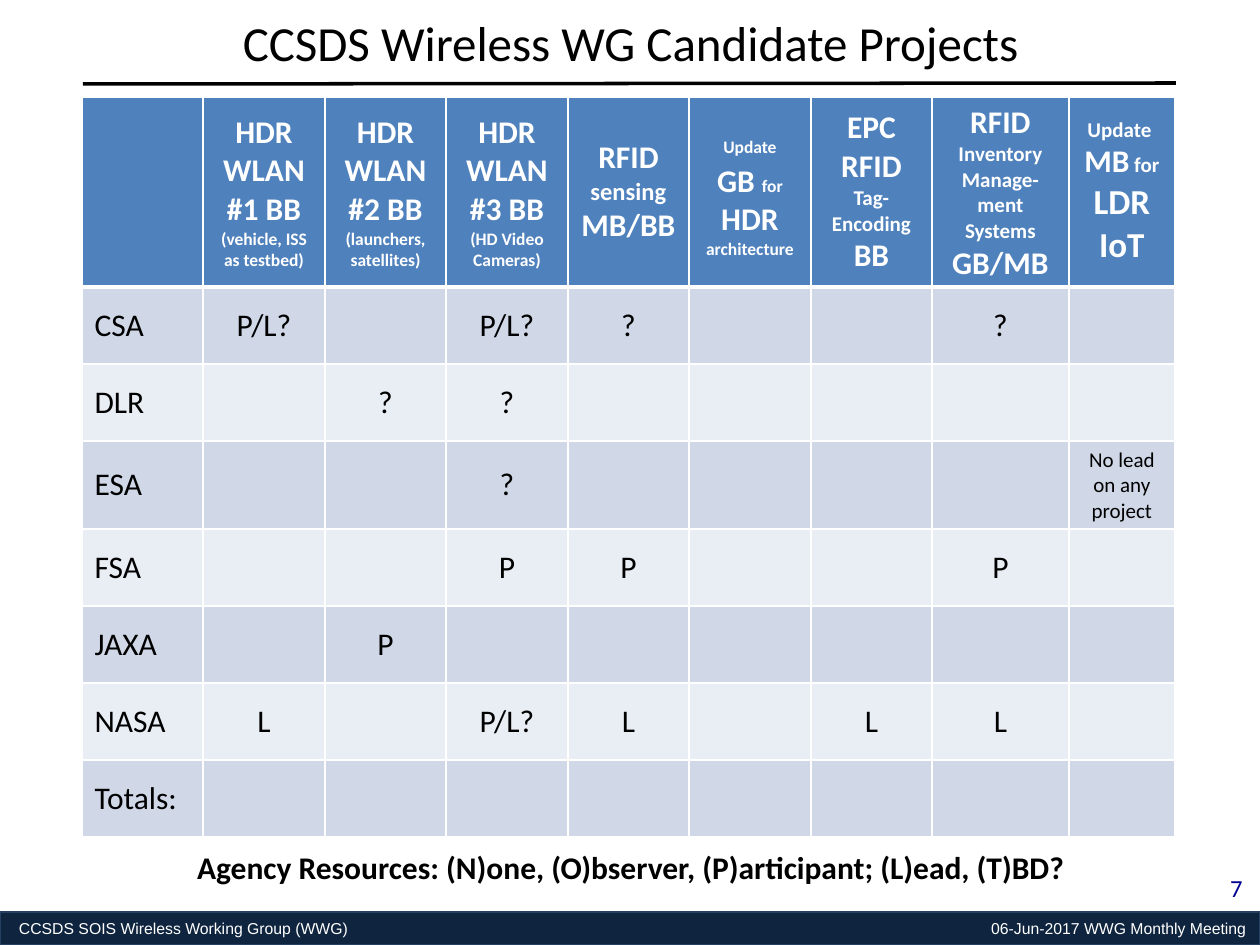
from lxml import etree
from pptx import Presentation
from pptx.dml.color import RGBColor
from pptx.enum.shapes import MSO_CONNECTOR, MSO_SHAPE
from pptx.enum.text import MSO_ANCHOR, MSO_AUTO_SIZE, PP_ALIGN
from pptx.oxml.ns import qn
from pptx.util import Pt

STRAIGHT = MSO_CONNECTOR.STRAIGHT
RECTANGLE = MSO_SHAPE.RECTANGLE
MIDDLE = MSO_ANCHOR.MIDDLE
NO_AUTOFIT = MSO_AUTO_SIZE.NONE
LEFT, CENTER, RIGHT = PP_ALIGN.LEFT, PP_ALIGN.CENTER, PP_ALIGN.RIGHT

WHITE = RGBColor(0xFF, 0xFF, 0xFF)
BLACK = RGBColor(0x00, 0x00, 0x00)
HEADER_BLUE = RGBColor(0x4F, 0x81, 0xBD)
BAND_DARK = RGBColor(0xD0, 0xD8, 0xE8)
BAND_LIGHT = RGBColor(0xE9, 0xED, 0xF4)
FOOTER_FILL = RGBColor(0x0F, 0x24, 0x3E)
FOOTER_LINE = RGBColor(0x25, 0x40, 0x61)
NUMBER_BLUE = RGBColor(0x00, 0x00, 0x90)

TITLE = "CCSDS Wireless WG Candidate Projects"
LEGEND = "Agency Resources: (N)one, (O)bserver, (P)articipant; (L)ead, (T)BD?"
FOOTER = "CCSDS SOIS Wireless Working Group (WWG)\t06-Jun-2017 WWG Monthly Meeting"
SLIDE_NUMBER = "7"

HEADERS = [
    [],
    [[("HDR WLAN #1 BB", 18)], [("(vehicle, ISS as testbed)", 10)]],
    [[("HDR WLAN #2 BB", 18)], [("(launchers, satellites)", 10)]],
    [[("HDR WLAN", 18)], [("#3 BB", 18), (" ", 16), ("(HD Video Cameras)", 10)]],
    [[("RFID ", 18), ("sensing", 14)], [("MB/BB", 18)]],
    [[("Update", 10), (" GB ", 18), ("for", 10), (" HDR ", 18), ("architecture", 10)]],
    [[("EPC RFID ", 18), ("Tag-Encoding", 12)], [("BB", 18)]],
    [[("RFID", 18), (" Inventory Manage-ment Systems", 12)], [("GB/MB", 18)]],
    [[("Update ", 12)], [("MB", 18), (" for ", 12), ("LDR IoT", 20)]],
]
AGENCIES = [
    ("CSA", {1: "P/L?", 3: "P/L?", 4: "?", 7: "?"}),
    ("DLR", {2: "?", 3: "?"}),
    ("ESA", {3: "?", 8: "No lead on any project"}),
    ("FSA", {3: "P", 4: "P", 7: "P"}),
    ("JAXA", {2: "P"}),
    ("NASA", {1: "L", 3: "P/L?", 4: "L", 6: "L", 7: "L"}),
    ("Totals:", {}),
]
NOTE_COLUMN = 8
COLUMN_WIDTHS = [121, 122] * 3 + [121, 137, 106]
ROW_HEIGHTS = [190, 77, 77, 88, 77, 77, 77, 77]
BORDER_SIDES = ("L", "R", "T", "B")


def px(value):
    return round(value * 914400 / 126)


def add_run(paragraph, text, size, color, bold=False, font="Calibri"):
    run = paragraph.add_run()
    run.text = text
    run.font.size = Pt(size)
    run.font.name = font
    run.font.bold = bold
    run.font.color.rgb = color


def add_label(slide, box, text, size, color, alignment, bold=False):
    label = slide.shapes.add_textbox(*map(px, box))
    label.text_frame.word_wrap = True
    paragraph = label.text_frame.paragraphs[0]
    paragraph.alignment = alignment
    add_run(paragraph, text, size, color, bold)


def set_borders(cell, bottom_points, top_points):
    properties = cell._tc.get_or_add_tcPr()
    for side in BORDER_SIDES:
        points = {"B": bottom_points, "T": top_points}.get(side, 1)
        line = etree.SubElement(properties, qn(f"a:ln{side}"), w=str(Pt(points)))
        fill = etree.SubElement(line, qn("a:solidFill"))
        etree.SubElement(fill, qn("a:srgbClr"), val=str(WHITE))


def fill_cell(cell, paragraphs, fill, color, bold, alignment):
    cell.vertical_anchor = MIDDLE
    cell.fill.solid()
    cell.fill.fore_color.rgb = fill
    for index, runs in enumerate(paragraphs):
        frame = cell.text_frame
        paragraph = frame.add_paragraph() if index else frame.paragraphs[0]
        paragraph.alignment = alignment
        for text, size in runs:
            add_run(paragraph, text, size, color, bold)


def add_title(slide):
    title = slide.shapes.title
    title.left, title.top, title.width, title.height = map(px, (36, 14, 1189, 70))
    frame = title.text_frame
    frame.auto_size = NO_AUTOFIT
    frame.word_wrap = True
    frame.vertical_anchor = MIDDLE
    frame.margin_top = frame.margin_bottom = 0
    title.height = px(64)
    paragraph = frame.paragraphs[0]
    paragraph.alignment = CENTER
    paragraph.line_spacing = 0.9
    add_run(paragraph, TITLE, 28, BLACK)

    rule = slide.shapes.add_connector(STRAIGHT, *map(px, (83, 84, 1176, 83)))
    rule.line.color.rgb = BLACK
    rule.line.width = Pt(2)
    etree.SubElement(rule._element.spPr, qn("a:effectLst"))


def add_project_table(slide):
    box = (82, 97, sum(COLUMN_WIDTHS), sum(ROW_HEIGHTS))
    table = slide.shapes.add_table(
        len(ROW_HEIGHTS), len(COLUMN_WIDTHS), *map(px, box)
    ).table
    table.horz_banding = False
    for column, width in zip(table.columns, COLUMN_WIDTHS):
        column.width = px(width)
    for row, height in zip(table.rows, ROW_HEIGHTS):
        row.height = px(height)

    for column, paragraphs in enumerate(HEADERS):
        cell = table.cell(0, column)
        set_borders(cell, 3, 1)
        fill_cell(cell, paragraphs, HEADER_BLUE, WHITE, True, CENTER)

    for row, (agency, entries) in enumerate(AGENCIES, 1):
        band = BAND_DARK if row % 2 else BAND_LIGHT
        texts = {0: agency, **entries}
        for column in range(len(COLUMN_WIDTHS)):
            cell = table.cell(row, column)
            set_borders(cell, 1, 3 if row == 1 else 1)
            size = 12 if column == NOTE_COLUMN else 18
            paragraphs = [[(texts[column], size)]] if column in texts else []
            alignment = CENTER if column else LEFT
            fill_cell(cell, paragraphs, band, BLACK, False, alignment)


def add_footer(slide):
    footer = slide.shapes.add_shape(RECTANGLE, *map(px, (0, 912, 1260, 33)))
    footer.shadow.inherit = False
    footer.fill.solid()
    footer.fill.fore_color.rgb = FOOTER_FILL
    footer.line.color.rgb = FOOTER_LINE
    footer.line.width = Pt(0.75)
    frame = footer.text_frame
    frame.word_wrap = True
    frame.vertical_anchor = MIDDLE
    frame.margin_left, frame.margin_right = px(19), px(6)
    frame.margin_top = frame.margin_bottom = 0
    paragraph = frame.paragraphs[0]
    paragraph.alignment = LEFT
    tabs = etree.SubElement(paragraph._p.get_or_add_pPr(), qn("a:tabLst"))
    etree.SubElement(tabs, qn("a:tab"), pos=str(px(1227)), algn="r")
    add_run(paragraph, FOOTER, 9, WHITE, font="Arial")


def main():
    presentation = Presentation()
    presentation.slide_width, presentation.slide_height = px(1260), px(945)
    slide = presentation.slides.add_slide(presentation.slide_layouts[5])
    add_footer(slide)
    add_label(slide, (1172, 867, 83, 44), SLIDE_NUMBER, 14, NUMBER_BLUE, RIGHT)
    add_title(slide)
    add_project_table(slide)
    add_label(slide, (180, 842, 902, 50), LEGEND, 18, BLACK, CENTER, True)
    presentation.save("out.pptx")


if __name__ == "__main__":
    main()
